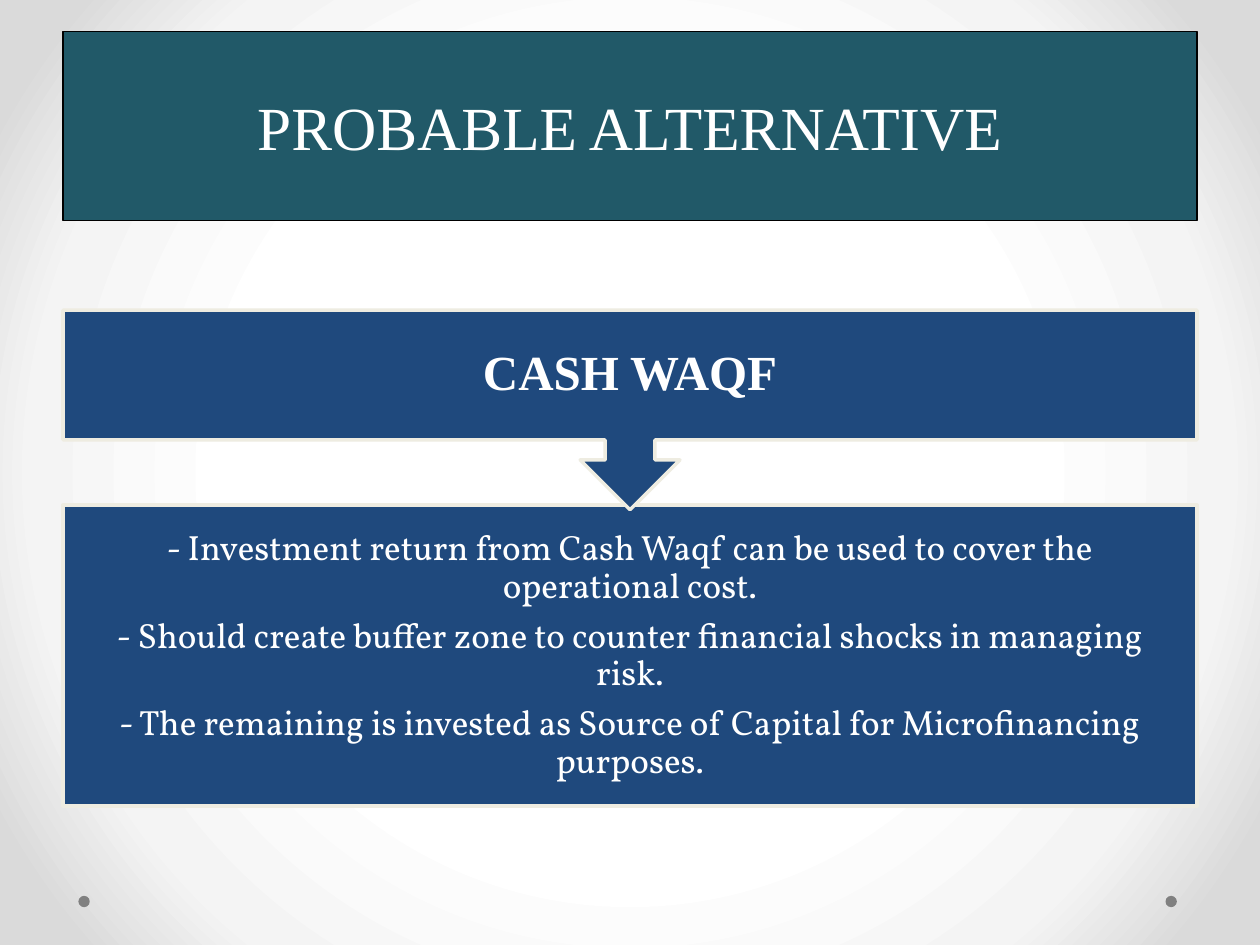
"""Build the slide on cash waqf as a probable alternative."""
from pptx import Presentation
from pptx.dml.color import RGBColor
from pptx.enum.shapes import MSO_SHAPE as Shape
from pptx.enum.text import MSO_ANCHOR as Anchor, PP_ALIGN as Align
from pptx.oxml import parse_xml
from pptx.util import Pt

TITLE = "PROBABLE ALTERNATIVE"
HEADING = "CASH WAQF"
POINTS = [
    "- Investment return from Cash Waqf can be used to cover the operational cost.",
    "- Should create buffer zone to counter financial shocks in managing risk.",
    "- The remaining is invested as Source of Capital for Microfinancing purposes.",
]
STOPS = [(0, "FFFFFF"), (50, "FFFFFF"), (76, "F4F4F4"), (92, "DADADA"), (100, "DADADA")]
WIDTH, HEIGHT, MARGIN = 720, 540, 36
INNER = WIDTH - 2 * MARGIN
DOT, DOT_TOP, DOT_LEFTS = 6.5, 511.9, (44.8, 666)
TEAL, NAVY, CREAM, WHITE, GREY = "215968", "1F497D", "EEECE1", "FFFFFF", "808080"
SERIF, BODY = "Times New Roman", "Vollkorn"
NS = "http://schemas.openxmlformats.org/{}/2006/main"


def rgb(color):
    return RGBColor.from_string(color)


def set_background(s):
    stops = "".join(f'<a:gs pos="{pos * 1000}"><a:srgbClr val="{color}"/></a:gs>'
                    for pos, color in STOPS)
    bg = parse_xml(
        f'<p:bg xmlns:p="{NS.format("presentationml")}" xmlns:a="{NS.format("drawingml")}">'
        f'<p:bgPr><a:gradFill rotWithShape="1"><a:gsLst>{stops}</a:gsLst>'
        '<a:path path="circle"><a:fillToRect l="50000" t="50000" r="50000" b="50000"/></a:path>'
        '</a:gradFill><a:effectLst/></p:bgPr></p:bg>')
    s.element.cSld.insert(0, bg)


def add_shape(s, kind, left, top, width, height, fill, line=None, weight=0):
    sp = s.shapes.add_shape(kind, Pt(left), Pt(top), Pt(width), Pt(height))
    sp.shadow.inherit = False
    sp.fill.solid()
    sp.fill.fore_color.rgb = rgb(fill)
    if line:
        sp.line.color.rgb = rgb(line)
        sp.line.width = Pt(weight)
    else:
        sp.line.fill.background()
    return sp


def write(sp, lines, font, size, inset, bold=False, spacing=1, after=0):
    tf = sp.text_frame
    tf.word_wrap = True
    tf.vertical_anchor = Anchor.MIDDLE
    tf.margin_left = tf.margin_right = tf.margin_top = tf.margin_bottom = Pt(inset)
    for i, line in enumerate(lines):
        p = tf.add_paragraph() if i else tf.paragraphs[0]
        p.alignment = Align.CENTER
        p.line_spacing = spacing
        p.space_after = Pt(after * size)
        r = p.add_run()
        r.text = line
        r.font.name, r.font.size, r.font.bold = font, Pt(size), bold
        r.font.color.rgb = rgb(WHITE)


def main():
    prs = Presentation()
    prs.slide_width, prs.slide_height = Pt(WIDTH), Pt(HEIGHT)
    s = prs.slides.add_slide(prs.slide_layouts[6])
    set_background(s)
    for left in DOT_LEFTS:
        add_shape(s, Shape.OVAL, left, DOT_TOP, DOT, DOT, GREY)

    title = add_shape(s, Shape.RECTANGLE, MARGIN, 18, INNER, 108, TEAL, "000000", 0.75)
    write(title, [TITLE], SERIF, 35, 4)

    points = add_shape(s, Shape.RECTANGLE, MARGIN, 288.7, INNER, 171.8, NAVY, CREAM, 2)
    write(points, POINTS, BODY, 20, 11.2, spacing=0.9, after=0.35)

    callout = add_shape(s, Shape.UP_ARROW_CALLOUT, MARGIN, 177.3, INNER, 114, NAVY, CREAM, 2)
    callout.rotation = 180
    heading = s.shapes.add_textbox(Pt(MARGIN), Pt(177.3), Pt(INNER), Pt(74.1))
    write(heading, [HEADING], SERIF, 28, 15.7, bold=True, spacing=0.9, after=0.35)

    prs.save("out.pptx")


if __name__ == "__main__":
    main()
